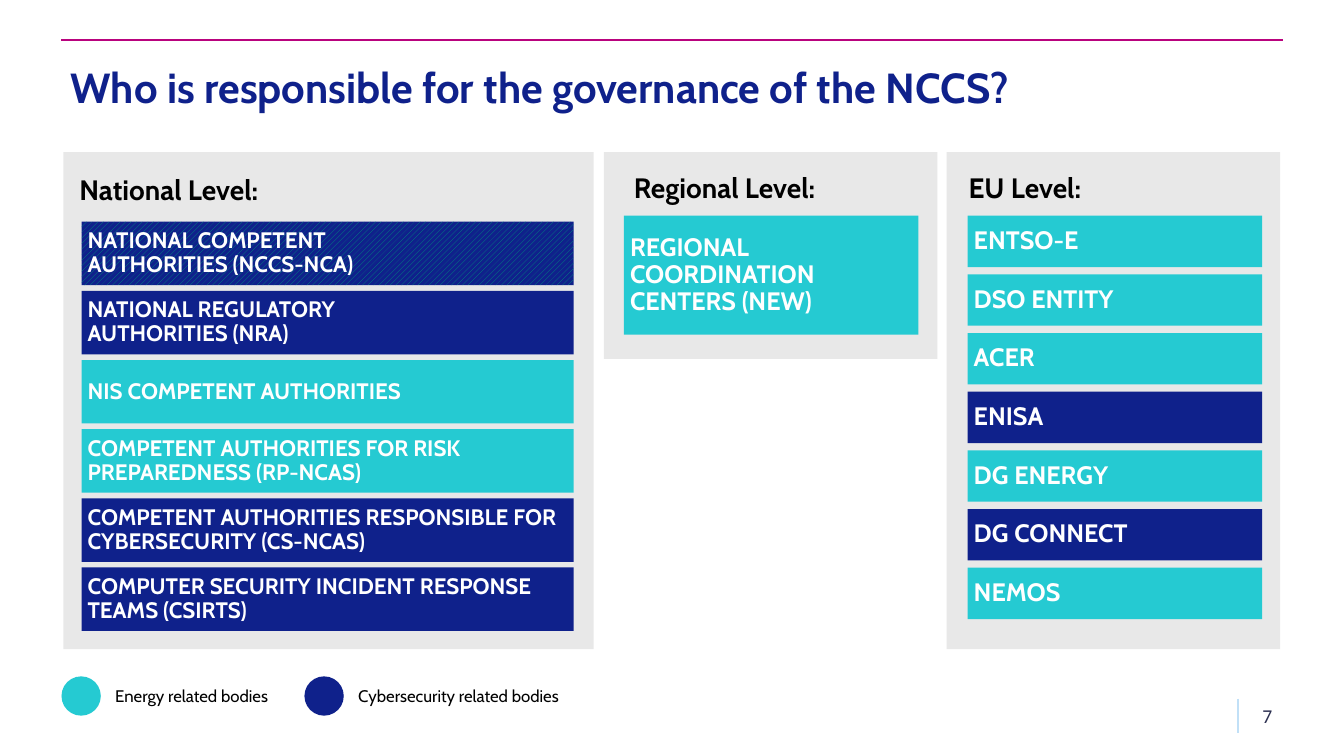
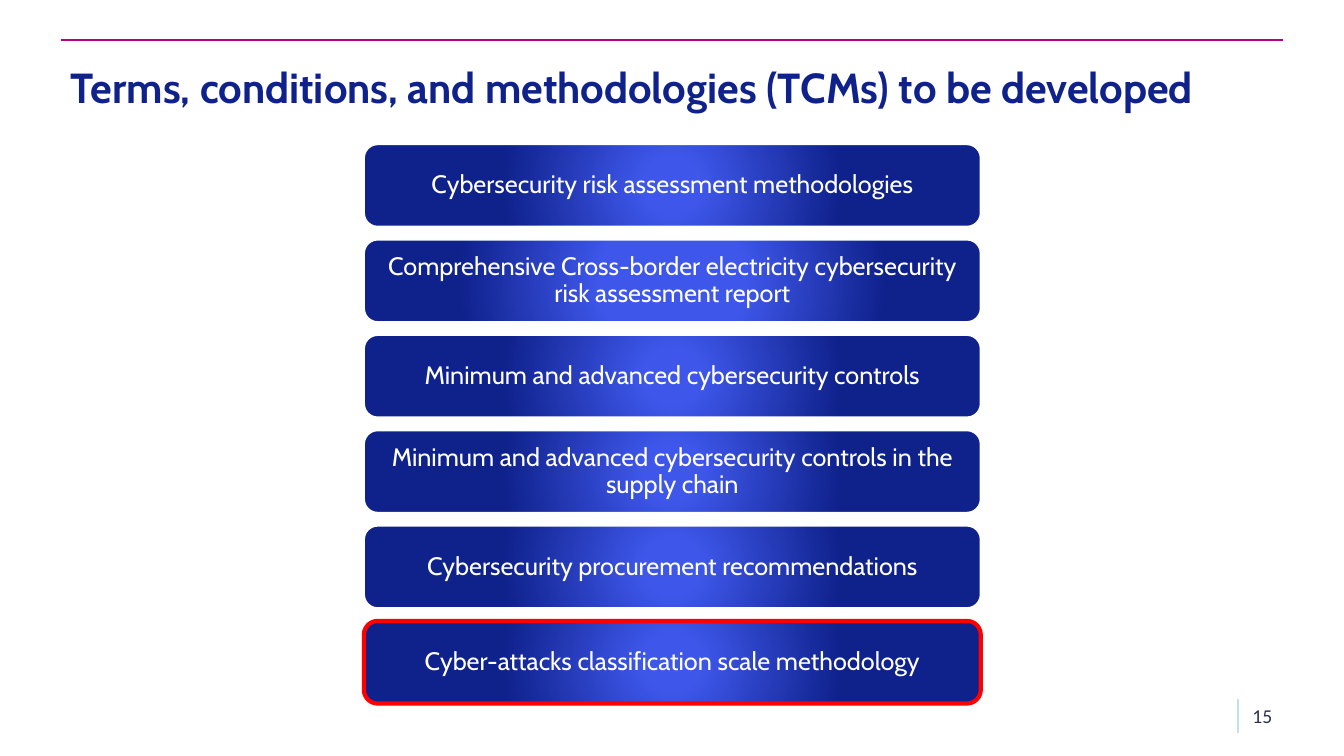
import dataclasses
import typing

import lxml.etree
import pptx
import pptx.dml.color
import pptx.enum.dml
import pptx.enum.shapes
import pptx.enum.text
import pptx.oxml
import pptx.oxml.ns
import pptx.shapes.autoshape
import pptx.slide
import pptx.text.text
import pptx.util

ShapeKind = pptx.enum.shapes.MSO_SHAPE
Align = pptx.enum.text.PP_ALIGN
Anchor = pptx.enum.text.MSO_ANCHOR
CELL = 0.1  # inches per grid column and row
TITLE_ONLY = 5


@dataclasses.dataclass(frozen=True)
class Theme:
    heading_font: str = "Cabin"
    number_font: str = "Calibri"
    navy: str = "0F218B"
    teal: str = "25CAD2"
    green: str = "00947F"
    glow: str = "3E57EA"
    panel: str = "E8E8E8"
    white: str = "FFFFFF"
    black: str = "000000"
    red: str = "FF0000"
    magenta: str = "B9037E"
    pale_blue: str = "C1E0F7"
    number_ink: str = "2C3051"
    title_size: float = 30
    level_size: float = 20
    body_size: float = 18
    national_size: float = 16
    number_size: float = 14
    legend_size: float = 12


THEME = Theme()


class Area(typing.NamedTuple):
    """A rectangle in grid columns and rows."""
    column: float
    row: float
    columns: float
    rows: float

    def lengths(self) -> list[pptx.util.Length]:
        return [cells(value) for value in self]

    def below(self, step: float) -> "Area":
        return self._replace(row=self.row + step)


@dataclasses.dataclass(frozen=True)
class TextStyle:
    size: float
    color: str
    bold: bool = False
    font: str = THEME.heading_font
    align: Align = Align.LEFT
    anchor: Anchor = Anchor.TOP
    line_spacing: float = 0.9
    inset: float | None = None
    wrap: bool = True


@dataclasses.dataclass(frozen=True)
class Body:
    name: str
    color: str = THEME.teal
    hatched: bool = False


@dataclasses.dataclass(frozen=True)
class Level:
    heading: str
    heading_area: Area
    panel: Area
    first_box: Area
    step: float
    text_size: float
    bodies: tuple[Body, ...]


@dataclasses.dataclass(frozen=True)
class Methodology:
    name: str
    glow_stops: tuple[int, int] = (9, 55)
    outline: str = THEME.white
    outline_width: float = 1.5


TITLE_AREA = Area(6, 6.2, 121.3, 8.9)
TITLE_STYLE = TextStyle(THEME.title_size, THEME.navy, bold=True)
LEVEL_STYLE = TextStyle(THEME.level_size, THEME.black, bold=True)
LEGEND_STYLE = TextStyle(THEME.legend_size, THEME.black, line_spacing=1, wrap=False)
NUMBER_STYLE = TextStyle(THEME.number_size, THEME.number_ink, font=THEME.number_font,
                         align=Align.RIGHT, anchor=Anchor.MIDDLE, line_spacing=1)
METHODOLOGY_STYLE = TextStyle(THEME.body_size, THEME.white, align=Align.CENTER,
                              anchor=Anchor.MIDDLE, inset=1.1)

LEVELS = (
    Level("EU Level:", Area(95.1, 16.8, 29.2, 4.6), Area(93.9, 15.1, 33.1, 49.3),
          Area(96, 21.4, 29.2, 5.1), 5.82, THEME.body_size, (
              Body("ENTSO-E"),
              Body("DSO ENTITY"),
              Body("ACER"),
              Body("ENISA", THEME.navy),
              Body("DG ENERGY"),
              Body("DG CONNECT", THEME.navy),
              Body("NEMOS"))),
    Level("Regional Level:", Area(61.9, 16.8, 27.1, 4.3), Area(59.9, 15.1, 33.1, 20.5),
          Area(61.9, 21.4, 29.2, 11.8), 0, THEME.body_size, (
              Body("REGIONAL COORDINATION\nCENTERS (NEW)"),)),
    Level("National Level:", Area(6.9, 17, 33.7, 2.4), Area(6.3, 15.1, 52.6, 49.3),
          Area(8.1, 22, 48.8, 6.3), 6.86, THEME.national_size, (
              Body("NATIONAL COMPETENT\nAUTHORITIES (NCCS-NCA)", THEME.navy, hatched=True),
              Body("NATIONAL REGULATORY\nAUTHORITIES (NRA)", THEME.navy),
              Body("NIS COMPETENT AUTHORITIES"),
              Body("COMPETENT AUTHORITIES FOR RISK PREPAREDNESS (RP-NCAS)"),
              Body("COMPETENT AUTHORITIES RESPONSIBLE FOR CYBERSECURITY (CS-NCAS)", THEME.navy),
              Body("COMPUTER SECURITY INCIDENT RESPONSE TEAMS (CSIRTS)", THEME.navy))),
)
LEGEND = (
    (Area(6.1, 67.1, 3.9, 3.9), THEME.teal, "Energy related bodies", 17.7),
    (Area(30.2, 67.1, 3.9, 3.9), THEME.navy, "Cybersecurity related bodies", 22.9),
)
METHODOLOGIES = (
    Methodology("Cybersecurity risk assessment methodologies"),
    Methodology("Comprehensive Cross-border electricity cybersecurity risk assessment report",
                glow_stops=(23, 69)),
    Methodology("Minimum and advanced cybersecurity controls"),
    Methodology("Minimum and advanced cybersecurity controls in the supply chain"),
    Methodology("Cybersecurity procurement recommendations"),
    Methodology("Cyber-attacks classification scale methodology",
                outline=THEME.red, outline_width=3),
)
FIRST_METHODOLOGY = Area(36.1, 14.3, 61.2, 8.2)
METHODOLOGY_STEP = 9.46


def cells(count: float) -> pptx.util.Length:
    return pptx.util.Inches(count * CELL)


def rgb(color: str) -> pptx.dml.color.RGBColor:
    return pptx.dml.color.RGBColor.from_string(color)


def set_attributes(target: typing.Any, values: dict[str, typing.Any]) -> None:
    for name, value in values.items():
        setattr(target, name, value)


def write(frame: pptx.text.text.TextFrame, text: str, style: TextStyle) -> None:
    set_attributes(frame, {"auto_size": pptx.enum.text.MSO_AUTO_SIZE.NONE,
                           "word_wrap": style.wrap, "vertical_anchor": style.anchor})
    if style.inset is not None:
        sides = ("left", "top", "right", "bottom")
        set_attributes(frame, {f"margin_{side}": cells(style.inset) for side in sides})
    paragraph = frame.paragraphs[0]
    paragraph.text = text
    set_attributes(paragraph, {"alignment": style.align, "line_spacing": style.line_spacing})
    for run in paragraph.runs:
        set_attributes(run.font, {"name": style.font, "bold": style.bold,
                                  "size": pptx.util.Pt(style.size)})
        run.font.color.rgb = rgb(style.color)


def add_filled(shapes: typing.Any, kind: ShapeKind, area: Area,
               color: str) -> pptx.shapes.autoshape.Shape:
    """Add a shape with a plain fill, no outline and no shadow."""
    shape = shapes.add_shape(kind, *area.lengths())
    shape.shadow.inherit = False
    shape.fill.solid()
    shape.fill.fore_color.rgb = rgb(color)
    shape.line.fill.background()
    return shape


def add_label(shapes: typing.Any, area: Area, text: str, style: TextStyle) -> None:
    write(shapes.add_textbox(*area.lengths()).text_frame, text, style)


def add_rule(slide: pptx.slide.Slide, start: tuple[float, float], end: tuple[float, float],
             color: str, width: float) -> None:
    rule = slide.shapes.add_connector(pptx.enum.shapes.MSO_CONNECTOR.STRAIGHT,
                                      *map(cells, start + end))
    rule.line.color.rgb = rgb(color)
    rule.line.width = pptx.util.Pt(width)
    lxml.etree.SubElement(rule.element.spPr, pptx.oxml.ns.qn("a:effectLst"))


def add_titled_slide(presentation: typing.Any, title: str, number: int) -> pptx.slide.Slide:
    """Add a slide with the shared rules, title and slide number."""
    slide = presentation.slides.add_slide(presentation.slide_layouts[TITLE_ONLY])
    add_rule(slide, (122.8, 69.3), (122.8, 72.7), THEME.pale_blue, 1)
    add_rule(slide, (6.1, 4), (127.3, 4), THEME.magenta, 1.5)
    placeholder = slide.shapes.title
    set_attributes(placeholder, dict(zip(("left", "top", "width", "height"),
                                         TITLE_AREA.lengths())))
    write(placeholder.text_frame, title, TITLE_STYLE)
    add_label(slide.shapes, Area(122.8, 69, 4.4, 4), str(number), NUMBER_STYLE)
    return slide


def hatch(shape: pptx.shapes.autoshape.Shape, line_color: str, ground: str) -> None:
    shape.fill.patterned()
    shape.fill.pattern = pptx.enum.dml.MSO_PATTERN.WIDE_UPWARD_DIAGONAL
    shape.fill.fore_color.rgb = rgb(line_color)
    shape.fill.back_color.rgb = rgb(ground)


def glow_from_centre(shape: pptx.shapes.autoshape.Shape, inner: int, outer: int) -> None:
    """Fill with a circular gradient that fades between two percentages."""
    colors = ((0, THEME.glow), (inner, THEME.glow), (outer, THEME.navy), (97, THEME.navy))
    stops = "".join(f'<a:gs pos="{share * 1000}"><a:srgbClr val="{color}"/></a:gs>'
                    for share, color in colors)
    gradient = pptx.oxml.parse_xml(
        f'<a:gradFill {pptx.oxml.ns.nsdecls("a")} rotWithShape="1"><a:gsLst>{stops}</a:gsLst>'
        '<a:path path="circle"><a:fillToRect l="50000" t="50000" r="50000" b="50000"/></a:path>'
        '</a:gradFill>')
    properties = shape.element.spPr
    properties.replace(properties.find(pptx.oxml.ns.qn("a:solidFill")), gradient)


def add_level(slide: pptx.slide.Slide, level: Level) -> None:
    shapes = slide.shapes.add_group_shape().shapes
    add_filled(shapes, ShapeKind.RECTANGLE, level.panel, THEME.panel)
    add_label(shapes, level.heading_area, level.heading, LEVEL_STYLE)
    style = TextStyle(level.text_size, THEME.white, bold=True, anchor=Anchor.MIDDLE, inset=0.6)
    for index, body in enumerate(level.bodies):
        area = level.first_box.below(index * level.step)
        box = add_filled(shapes, ShapeKind.RECTANGLE, area, body.color)
        if body.hatched:
            hatch(box, THEME.green, body.color)
        write(box.text_frame, body.name, style)


def add_governance_slide(presentation: typing.Any) -> None:
    slide = add_titled_slide(presentation,
                             "Who is responsible for the governance of the\u00a0NCCS?".replace("\u00a0", " "), 7)
    for level in LEVELS:
        add_level(slide, level)
    for dot, color, text, columns in LEGEND:
        shapes = slide.shapes.add_group_shape().shapes
        add_filled(shapes, ShapeKind.OVAL, dot, color)
        add_label(shapes, Area(dot.column + 4.35, 67.5, columns, 3), text, LEGEND_STYLE)


def add_methodologies_slide(presentation: typing.Any) -> None:
    slide = add_titled_slide(presentation,
                             "Terms, conditions, and methodologies (TCMs) to be developed", 15)
    for index, methodology in enumerate(METHODOLOGIES):
        area = FIRST_METHODOLOGY.below(index * METHODOLOGY_STEP)
        bar = add_filled(slide.shapes, ShapeKind.ROUNDED_RECTANGLE, area, THEME.navy)
        glow_from_centre(bar, *methodology.glow_stops)
        bar.line.color.rgb = rgb(methodology.outline)
        bar.line.width = pptx.util.Pt(methodology.outline_width)
        write(bar.text_frame, methodology.name, METHODOLOGY_STYLE)


def main() -> None:
    presentation = pptx.Presentation()
    presentation.slide_width = cells(133.33)
    presentation.slide_height = cells(75)
    add_governance_slide(presentation)
    add_methodologies_slide(presentation)
    presentation.save("out.pptx")


if __name__ == "__main__":
    main()
